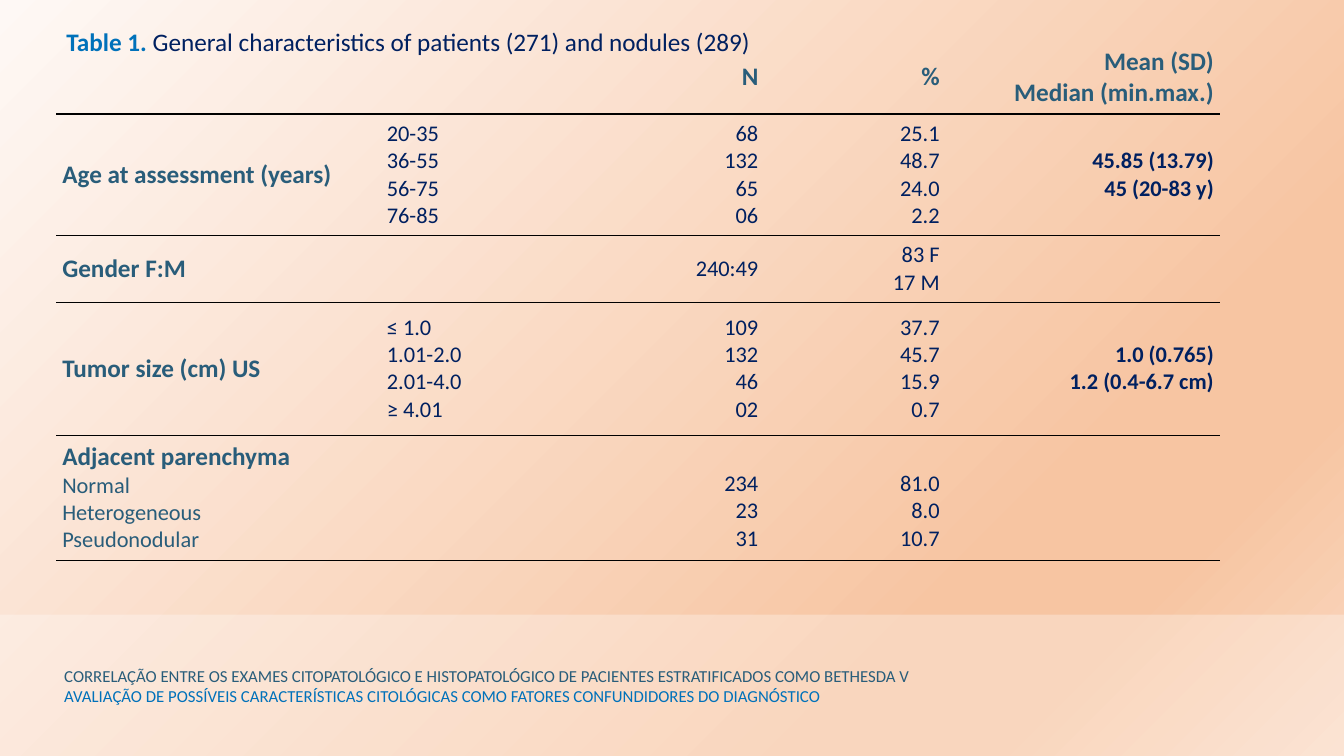
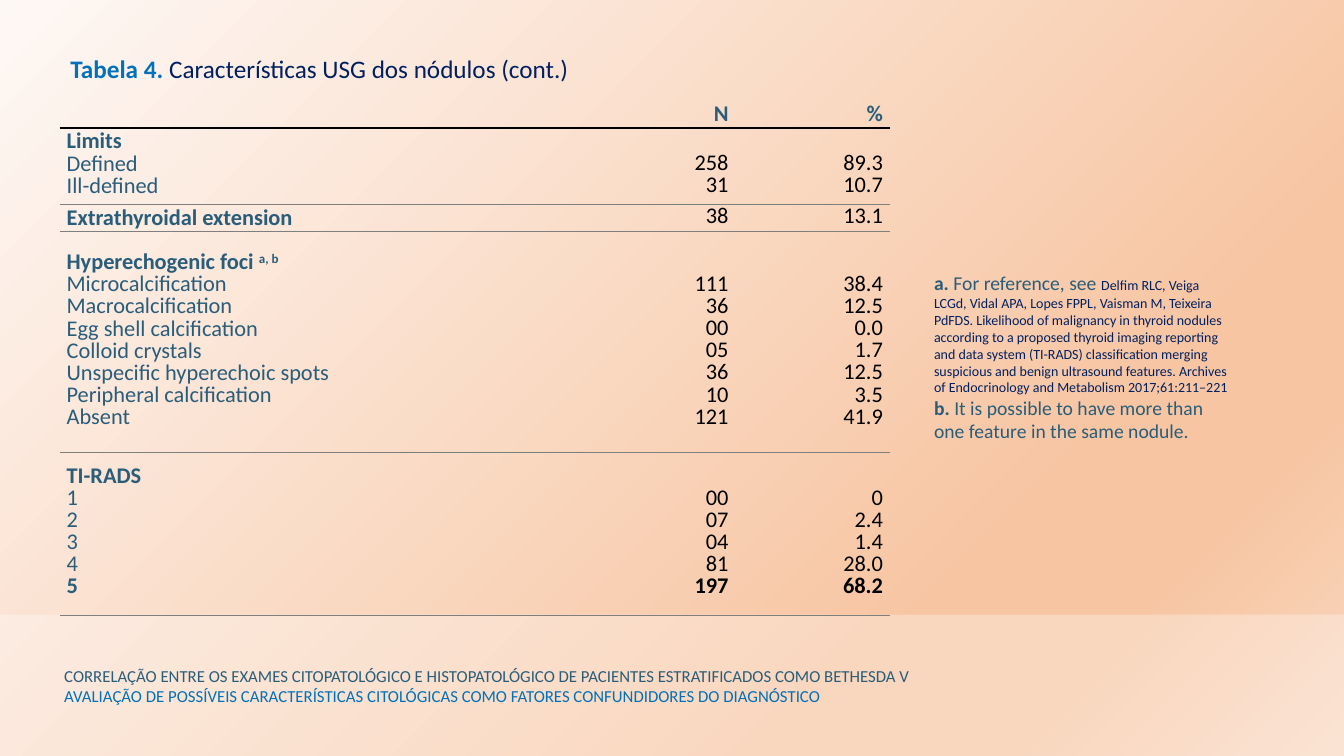
"""Build two slides of thyroid nodule tables on a shared peach background."""
from lxml import etree
from pptx import Presentation
from pptx.dml.color import RGBColor
from pptx.enum.shapes import MSO_SHAPE
from pptx.enum.text import MSO_ANCHOR, MSO_AUTO_SIZE, PP_ALIGN
from pptx.oxml.ns import qn
from pptx.util import Cm, Pt

RECT = MSO_SHAPE.RECTANGLE
TOP, MIDDLE = MSO_ANCHOR.TOP, MSO_ANCHOR.MIDDLE
LEFT, RIGHT = PP_ALIGN.LEFT, PP_ALIGN.RIGHT
FIXED = MSO_AUTO_SIZE.NONE
FONT = "Calibri"
TEAL, BLUE, NAVY = "295D7A", "0071BA", "002060"
BLACK, GRAY, WHITE = "000000", "7F7F7F", "FFFFFF"
BOLD = {"bold": True}
PLAIN = "{2D5ABB26-0587-4C30-8999-92F81FD0307C}"
STOPS = [(0, "FEF8F5"), (74, "F7C5A2"), (83, "F7C5A2"), (100, "FAD8C1")]


def tint(code):
    """Turn a hex string into a colour."""
    return RGBColor.from_string(code)


def write(frame, lines, align=LEFT, space=1, after=0, **look):
    """Fill a frame; a line is a string or a list of (text, format) runs."""
    frame.word_wrap = True
    for n, line in enumerate(lines):
        para = frame.add_paragraph() if n else frame.paragraphs[0]
        para.alignment = align
        para.line_spacing = space
        if n < len(lines) - 1:
            para.space_after = Pt(after)
        for words, own in [(line, {})] if isinstance(line, str) else line:
            form = {**look, **own}
            run = para.add_run()
            run.text = words
            run.font.name = FONT
            run.font.size = Pt(form["size"])
            run.font.bold = form.get("bold", False)
            run.font.color.rgb = tint(form["color"])
            if "base" in form:
                run.font._element.set("baseline", str(form["base"] * 1000))


prs = Presentation()
prs.slide_width, prs.slide_height = Cm(33.87), Cm(19.05)
master, layout = prs.slide_master, prs.slide_layouts[5]
fill = master.background.fill
fill.gradient()
fill.gradient_angle = 315
ramp = master.element.find(".//" + qn("a:gsLst"))
for stop in list(ramp):
    ramp.remove(stop)
for place, code in STOPS:
    stop = etree.SubElement(ramp, qn("a:gs"), pos=str(place * 1000))
    etree.SubElement(stop, qn("a:srgbClr"), val=code)

pages = [prs.slides.add_slide(layout) for _ in range(2)]
shapes = pages[0].shapes
band = shapes.add_shape(RECT, 0, Cm(15.49), prs.slide_width, Cm(3.56))
band.shadow.inherit = False
band.fill.solid()
band.fill.fore_color.rgb = tint(WHITE)
band.line.fill.background()
etree.SubElement(band.element.find(".//" + qn("a:srgbClr")), qn("a:alpha"), val="30000")
foot = shapes.add_textbox(Cm(1.37), Cm(16.64), Cm(22.91), Cm(1.27))
write(foot.text_frame, [
    "CORRELAÇÃO ENTRE OS EXAMES CITOPATOLÓGICO E HISTOPATOLÓGICO DE PACIENTES "
    "ESTRATIFICADOS COMO BETHESDA V",
    [("AVALIAÇÃO DE POSSÍVEIS CARACTERÍSTICAS CITOLÓGICAS COMO FATORES "
      "CONFUNDIDORES DO DIAGNÓSTICO", {"color": BLUE})],
], size=12, color=TEAL)
for n, part in enumerate((band, foot), 20):
    part.element.nvSpPr.cNvPr.set("id", str(n))
    layout.shapes.element.append(part.element)

general = [
    [[], [], ["N"], ["%"], ["Mean (SD)", "Median (min.max.)"]],
    [["Age at assessment (years)"], ["20-35", "36-55", "56-75", "76-85"],
     ["68", "132", "65", "06"], ["25.1", "48.7", "24.0", "2.2"],
     ["45.85 (13.79)", "45 (20-83 y)"]],
    [["Gender F:M"], [], ["240:49"], ["83 F", "17 M"], []],
    [["Tumor size (cm) US"], ["≤ 1.0", "1.01-2.0", "2.01-4.0", "≥ 4.01"],
     ["109", "132", "46", "02"], ["37.7", "45.7", "15.9", "0.7"],
     ["1.0 (0.765)", "1.2 (0.4-6.7 cm)"]],
    [["Adjacent parenchyma", "Normal", "Heterogeneous", "Pseudonodular"], [],
     ["234", "23", "31"], ["81.0", "8.0", "10.7"], []],
]
traits = [
    [[], ["N"], ["%"]],
    [["Limits", "Defined", "Ill-defined"], ["258", "31"], ["89.3", "10.7"]],
    [["Extrathyroidal extension"], ["38"], ["13.1"]],
    [[[("Hyperechogenic foci ", BOLD), ("a, b", {"bold": True, "base": 30})],
      "Microcalcification", "Macrocalcification", "Egg shell calcification",
      "Colloid crystals", "Unspecific hyperechoic spots",
      "Peripheral calcification", "Absent"],
     ["111", "36", "00", "05", "36", "10", "121"],
     ["38.4", "12.5", "0.0", "1.7", "12.5", "3.5", "41.9"]],
    [["TI-RADS", "1", "2", "3", "4", [("5", BOLD)]],
     ["00", "07", "04", "81", [("197", BOLD)]],
     ["0", "2.4", "1.4", "28.0", [("68.2", BOLD)]]],
]
specs = [
    dict(name="Table 1. ", topic="General characteristics of patients (271) and nodules (289)",
         head=(1.42, 0.53, 17.8), spot=(1.42, 1.02), data=general,
         cols=[8.18, 4.83, 4.83, 4.57, 6.91], rows=[1.6, 2.79, 1.6, 3.35, 2.79],
         left=2, size=18, ink=NAVY, rule=(BLACK, 0.5), side=0.15, pad=0.15,
         drop=0.69, tight=1, after=0),
    dict(name="Tabela 4. ", topic="Características USG dos nódulos (cont.)",
         head=(1.52, 1.22, 27.94), spot=(1.5, 2.51), data=traits,
         cols=[11.76, 5.28, 3.89], rows=[0.71, 1.93, 0.69, 5.56, 4.11],
         left=1, size=16, ink=BLACK, rule=(GRAY, 1), side=0.18, pad=0,
         drop=0.55, tight=0.6, after=4),
]

for page, spec in zip(pages, specs):
    title = page.shapes.title
    x, y, wide = spec["head"]
    title.left, title.top, title.width, title.height = Cm(x), Cm(y), Cm(wide), Cm(1.02)
    title.text_frame.auto_size = FIXED
    title.text_frame.vertical_anchor = TOP
    write(title.text_frame, [[(spec["name"], {"color": BLUE, "bold": True}),
                              (spec["topic"], {})]], size=18, color=NAVY)

    data, cols, rows = spec["data"], spec["cols"], spec["rows"]
    x, y = spec["spot"]
    table = page.shapes.add_table(len(rows), len(cols), Cm(x), Cm(y),
                                  Cm(sum(cols)), Cm(sum(rows))).table
    table.first_row = table.horz_banding = False
    table._tbl.tblPr.find(qn("a:tableStyleId")).text = PLAIN
    for c, wide in enumerate(cols):
        table.columns[c].width = Cm(wide)
    edges = [None, (BLACK, 1.5)] + [spec["rule"]] * (len(rows) - 1)

    for r, row in enumerate(data):
        table.rows[r].height = Cm(rows[r])
        if spec["left"] == 2 and not row[1]:
            table.cell(r, 0).merge(table.cell(r, 1))
        for c, lines in enumerate(row):
            cell = table.cell(r, c)
            cell.fill.background()
            cell.vertical_anchor = MIDDLE
            cell.margin_left = cell.margin_right = Cm(spec["side"])
            lower = c > 0 and len(row[0]) > 1
            cell.margin_top = Cm(spec["pad"] + (spec["drop"] if lower else 0))
            cell.margin_bottom = Cm(spec["pad"])
            props = cell._tc.get_or_add_tcPr()
            for tag, edge in (("a:lnB", edges[r + 1]), ("a:lnT", edges[r])):
                if edge:
                    line = etree.Element(qn(tag), w=str(Pt(edge[1])))
                    paint = etree.SubElement(line, qn("a:solidFill"))
                    etree.SubElement(paint, qn("a:srgbClr"), val=edge[0])
                    props.insert(0, line)
            frame = cell.text_frame
            if not lines:
                etree.SubElement(frame.paragraphs[0]._p, qn("a:endParaRPr"), sz="1000")
                continue
            look = dict(size=16, color=spec["ink"], bold=c == 4)
            if r == 0:
                look = dict(size=spec["size"], color=TEAL, bold=True)
            elif c == 0:
                look = dict(size=16, color=TEAL)
                if isinstance(lines[0], str):
                    lines = [[(lines[0], dict(size=spec["size"], bold=True))]] + lines[1:]
            loose = r == 0 or (c == 0 and len(lines) == 1)
            write(frame, lines, align=LEFT if c < spec["left"] else RIGHT,
                  space=1 if loose else spec["tight"], after=spec["after"], **look)

note = pages[1].shapes.add_textbox(Cm(23.29), Cm(6.71), Cm(7.95), Cm(4.62))
write(note.text_frame, [
    [("a. ", BOLD), ("For reference, see ", {}),
     ("Delfim RLC, Veiga LCGd, Vidal APA, Lopes FPPL, Vaisman M, Teixeira PdFDS. "
      "Likelihood of malignancy in thyroid nodules according to a proposed thyroid "
      "imaging reporting and data system (TI-RADS) classification merging suspicious "
      "and benign ultrasound features. Archives of Endocrinology and Metabolism "
      "2017;61:211–221", {"size": 10, "color": NAVY})],
    [("b. ", BOLD),
     ("It is possible to have more than one feature in the same nodule.", {})],
], size=14, color=TEAL)

prs.save("out.pptx")
